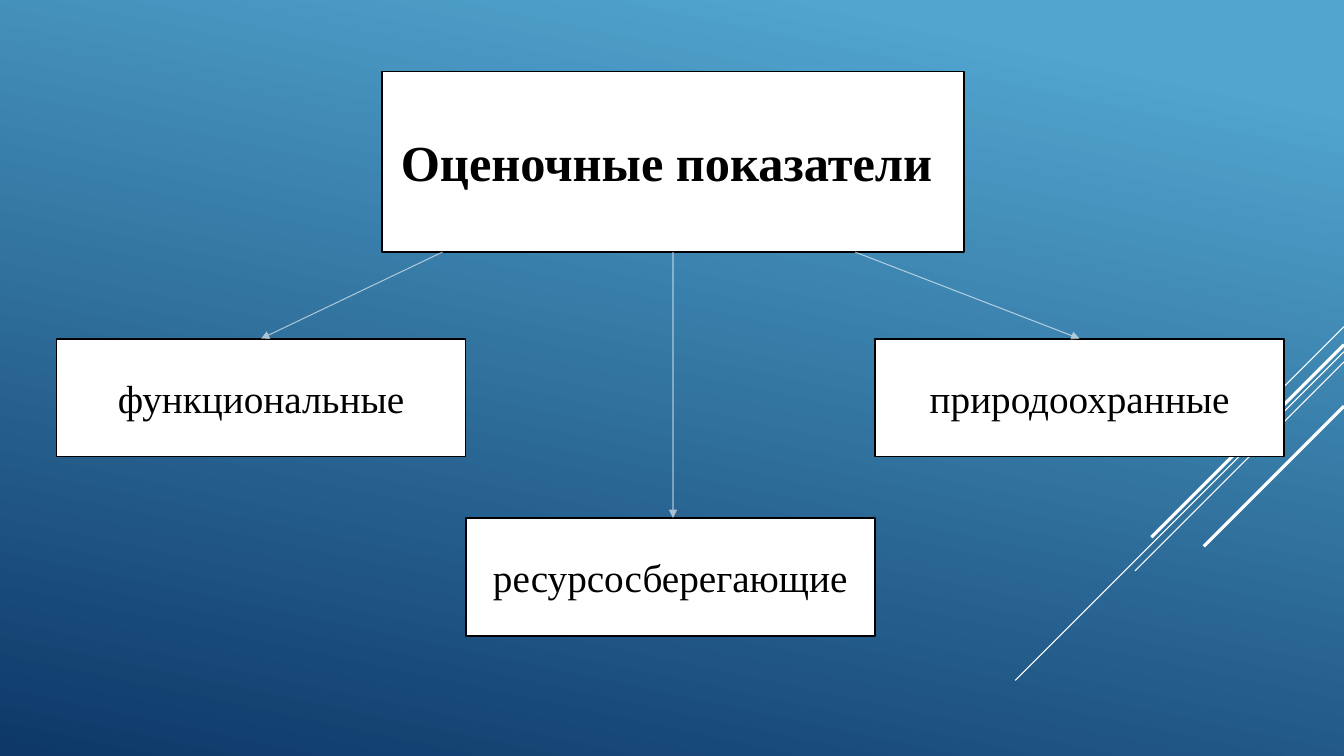
from lxml.etree import SubElement
from pptx import Presentation
from pptx.dml.color import RGBColor
from pptx.enum.shapes import MSO_CONNECTOR, MSO_SHAPE
from pptx.enum.text import MSO_ANCHOR, MSO_AUTO_SIZE, PP_ALIGN
from pptx.oxml.ns import qn
from pptx.util import Inches, Pt


def color(value):
    return RGBColor.from_string(value)


class IndicatorSlide:
    font = "Times New Roman"
    white = "FFFFFF"
    black = "000000"

    def __init__(self, presentation):
        self.width = presentation.slide_width
        self.height = presentation.slide_height
        self.slide = presentation.slides.add_slide(presentation.slide_layouts[5])

    def across(self, percent):
        return round(self.width * percent / 100)

    def down(self, percent):
        return round(self.height * percent / 100)

    def background(self, start, end, angle):
        fill = self.slide.background.fill
        fill.gradient()
        fill.gradient_angle = 360 - angle
        for stop, (position, value) in zip(fill.gradient_stops, (start, end)):
            stop.position = position
            stop.color.rgb = color(value)

    def format_box(self, shape, text, size, bold=False):
        shape.fill.solid()
        shape.fill.fore_color.rgb = color(self.white)
        shape.line.color.rgb = color(self.black)
        shape.line.width = Pt(1.25)
        frame = shape.text_frame
        frame.text = text
        frame.word_wrap = True
        frame.auto_size = MSO_AUTO_SIZE.NONE
        frame.vertical_anchor = MSO_ANCHOR.MIDDLE
        paragraph = frame.paragraphs[0]
        paragraph.alignment = PP_ALIGN.CENTER
        font = paragraph.runs[0].font
        font.name = self.font
        font.size = Pt(size)
        font.bold = bold
        font.color.rgb = color(self.black)
        return shape

    def title(self, text, left, top, width, height):
        shape = self.slide.shapes.title
        shape.left, shape.top = self.across(left), self.down(top)
        shape.width, shape.height = self.across(width), self.down(height)
        return self.format_box(shape, text, 36, bold=True)

    def box(self, text, column, top):
        column_width = 30.45
        shape = self.slide.shapes.add_shape(
            MSO_SHAPE.RECTANGLE,
            self.across(4.2 + column * column_width), self.down(top),
            self.across(column_width), self.down(15.6))
        shape.shadow.inherit = False
        return self.format_box(shape, text, 28)

    def line(self, start_x, start_y, end_x, end_y, weight=0.75):
        connector = self.slide.shapes.add_connector(
            MSO_CONNECTOR.STRAIGHT, start_x, start_y, end_x, end_y)
        connector.line.color.rgb = color(self.white)
        connector.line.width = Pt(weight)
        SubElement(connector._element.spPr, qn("a:effectLst"))
        return connector

    def diagonal(self, top, run, weight):
        length = self.across(run)
        self.line(self.width, self.down(top),
                  self.width - length, self.down(top) + length, weight)

    def arrow(self, start_x, title, end_x, box):
        connector = self.line(start_x, title.top + title.height, end_x, box.top)
        outline = connector.line._get_or_add_ln()
        SubElement(outline.find(".//" + qn("a:srgbClr")), qn("a:alpha"), val="60000")
        SubElement(outline, qn("a:tailEnd"), type="triangle")
        return connector


def main():
    presentation = Presentation()
    presentation.slide_width = Inches(13.33)
    presentation.slide_height = Inches(7.5)
    page = IndicatorSlide(presentation)
    page.background((0.1, "51A5CF"), (1, "0D3868"), 102)

    for top, run, weight in ((43.2, 7.5, 0.75), (46.53, 24.46, 0.75),
                             (47.87, 15.55, 0.75), (45.6, 14.33, 2.25),
                             (53.73, 10.43, 2.25)):
        page.diagonal(top, run, weight)

    title = page.title("Оценочные показатели ", 28.43, 9.47, 43.29, 23.87)
    functional = page.box("функциональные", 0, 44.8)
    saving = page.box("ресурсосберегающие", 1, 68.53)
    protective = page.box("природоохранные", 2, 44.8)

    middle = title.left + title.width // 2
    page.arrow(middle, title, middle, saving).begin_connect(title, 2)
    for start, box in ((32.93, functional), (63.62, protective)):
        arrow = page.arrow(page.across(start), title, box.left + box.width // 2, box)
        arrow.end_connect(box, 0)

    presentation.save("out.pptx")


if __name__ == "__main__":
    main()
